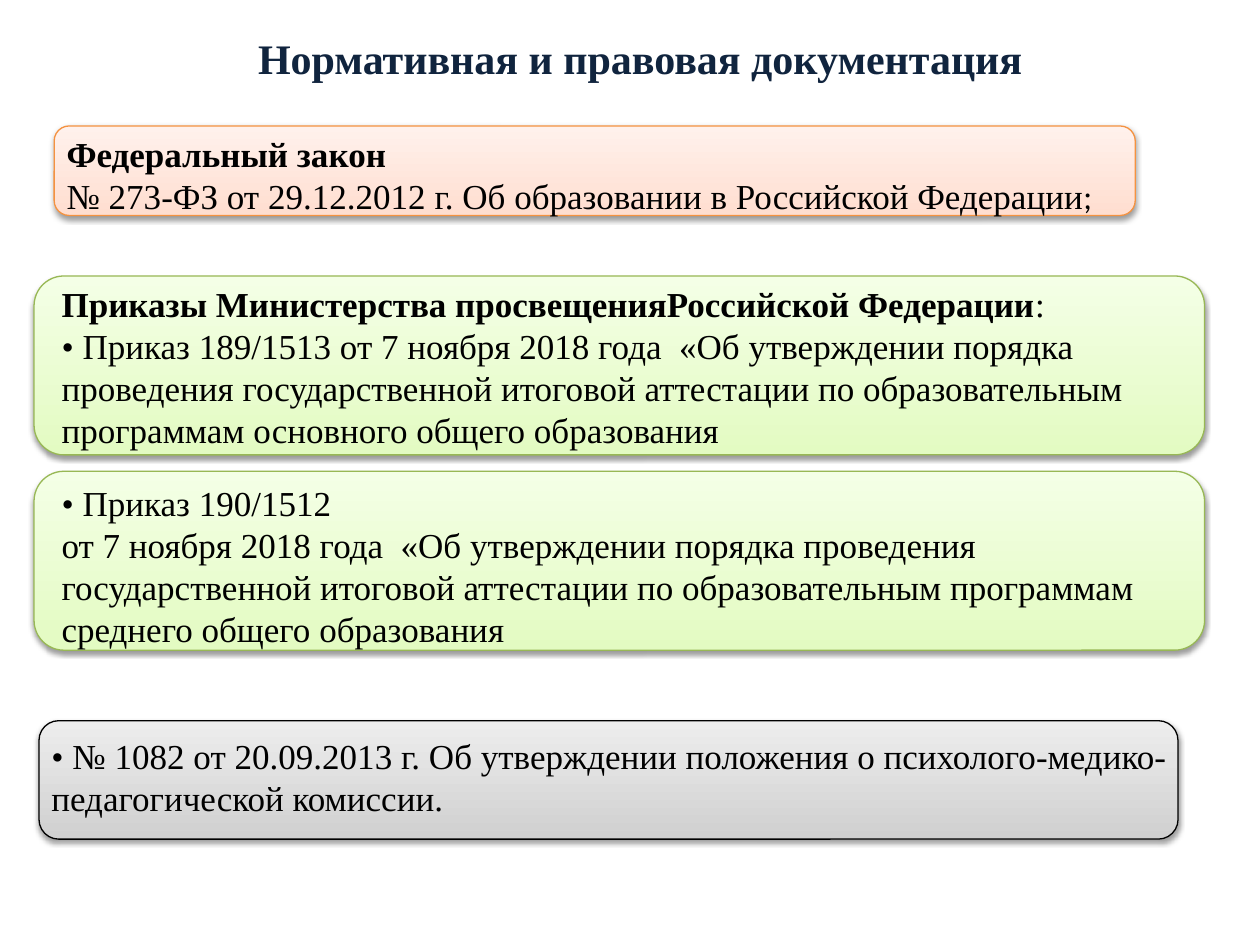
from lxml.etree import SubElement
from pptx import Presentation
from pptx.dml.color import RGBColor
from pptx.enum.shapes import MSO_SHAPE
from pptx.enum.text import PP_ALIGN
from pptx.oxml.ns import qn
from pptx.util import Inches, Pt

NAVY = RGBColor(0x10, 0x24, 0x3E)
BLACK = RGBColor(0, 0, 0)
ORANGE = (RGBColor(0xFF, 0xDE, 0xD0), RGBColor(0xFF, 0xF1, 0xEC), RGBColor(0xF5, 0x92, 0x40))
GREEN = (RGBColor(0xE3, 0xFB, 0xC2), RGBColor(0xF4, 0xFF, 0xE6), RGBColor(0x98, 0xB8, 0x55))
GRAY = (RGBColor(0xD0, 0xD0, 0xD0), RGBColor(0xED, 0xED, 0xED), BLACK)

PLAIN = {}
BOLD = {"bold": True}

LAW = [
    [("Федеральный закон", BOLD)],
    [("№ 273-ФЗ от 29.12.2012 г. Об образовании в Российской Федерации", PLAIN),
     (";", {"size": 18, "font": "Lato"})],
]
ORDER_189 = [
    [("Приказы Министерства просвещенияРоссийской Федерации", BOLD), (":", PLAIN)],
    [("• Приказ 189/1513 от 7 ноября 2018 года  «Об утверждении порядка", PLAIN)],
    [("проведения государственной итоговой аттестации по образовательным "
      "программам основного общего образования", PLAIN)],
]
ORDER_190 = [
    [("• Приказ 190/1512", PLAIN)],
    [("от 7 ноября 2018 года  «Об утверждении порядка проведения государственной "
      "итоговой аттестации по образовательным программам среднего общего образования", PLAIN)],
]
COMMISSION = [
    [("• № 1082 от 20.09.2013 г. Об утверждении положения о "
      "психолого-медико-педагогической комиссии.", PLAIN)],
]


def add_run(paragraph, text, size=20, font="Times New Roman", color=BLACK, bold=False):
    run = paragraph.add_run()
    run.text = text
    run.font.size = Pt(size)
    run.font.name = font
    run.font.color.rgb = color
    run.font.bold = bold


def add_text(slide, box, paragraphs, align=PP_ALIGN.LEFT):
    frame = slide.shapes.add_textbox(*map(Inches, box)).text_frame
    frame.word_wrap = True
    for index, runs in enumerate(paragraphs):
        paragraph = frame.add_paragraph() if index else frame.paragraphs[0]
        paragraph.alignment = align
        for text, style in runs:
            add_run(paragraph, text, **style)


def add_shadow(shape):
    shape.shadow.inherit = False
    effects = shape._element.spPr.find(qn("a:effectLst"))
    shadow = SubElement(effects, qn("a:outerShdw"), blurRad=str(Pt(3.1)),
                        dist=str(Pt(1.6)), dir="5400000", rotWithShape="0")
    color = SubElement(shadow, qn("a:srgbClr"), val=str(BLACK))
    SubElement(color, qn("a:alpha"), val="38000")


def add_panel(slide, box, colors):
    bottom, top, outline = colors
    panel = slide.shapes.add_shape(MSO_SHAPE.ROUNDED_RECTANGLE, *map(Inches, box))
    panel.fill.gradient()
    panel.fill.gradient_angle = 90
    for stop, color in zip(panel.fill.gradient_stops, (bottom, top)):
        stop.color.rgb = color
    panel.line.color.rgb = outline
    panel.line.width = Pt(0.75)
    add_shadow(panel)


def add_document(slide, box, colors, text_box, paragraphs):
    add_panel(slide, box, colors)
    add_text(slide, text_box, paragraphs)


def main():
    presentation = Presentation()
    presentation.slide_width = Inches(10)
    presentation.slide_height = Inches(7.5)
    slide = presentation.slides.add_slide(presentation.slide_layouts[6])

    title_style = {"size": 24, "color": NAVY, "bold": True}
    add_text(slide, (0.59, 0.21, 8.98, 0.5),
             [[("Нормативная и правовая документация", title_style)]], PP_ALIGN.CENTER)

    documents = [
        ((0.43, 1, 8.58, 0.71), ORANGE, (0.43, 1, 9.37, 0.77), LAW),
        ((0.27, 2.19, 9.29, 1.42), GREEN, (0.39, 2.19, 9.38, 1.43), ORDER_189),
        ((0.27, 3.74, 9.29, 1.42), GREEN, (0.39, 3.77, 9.17, 1.43), ORDER_190),
        ((0.31, 5.72, 9.04, 0.94), GRAY, (0.31, 5.78, 9.53, 0.77), COMMISSION),
    ]
    for document in documents:
        add_document(slide, *document)

    presentation.save("out.pptx")


if __name__ == "__main__":
    main()
